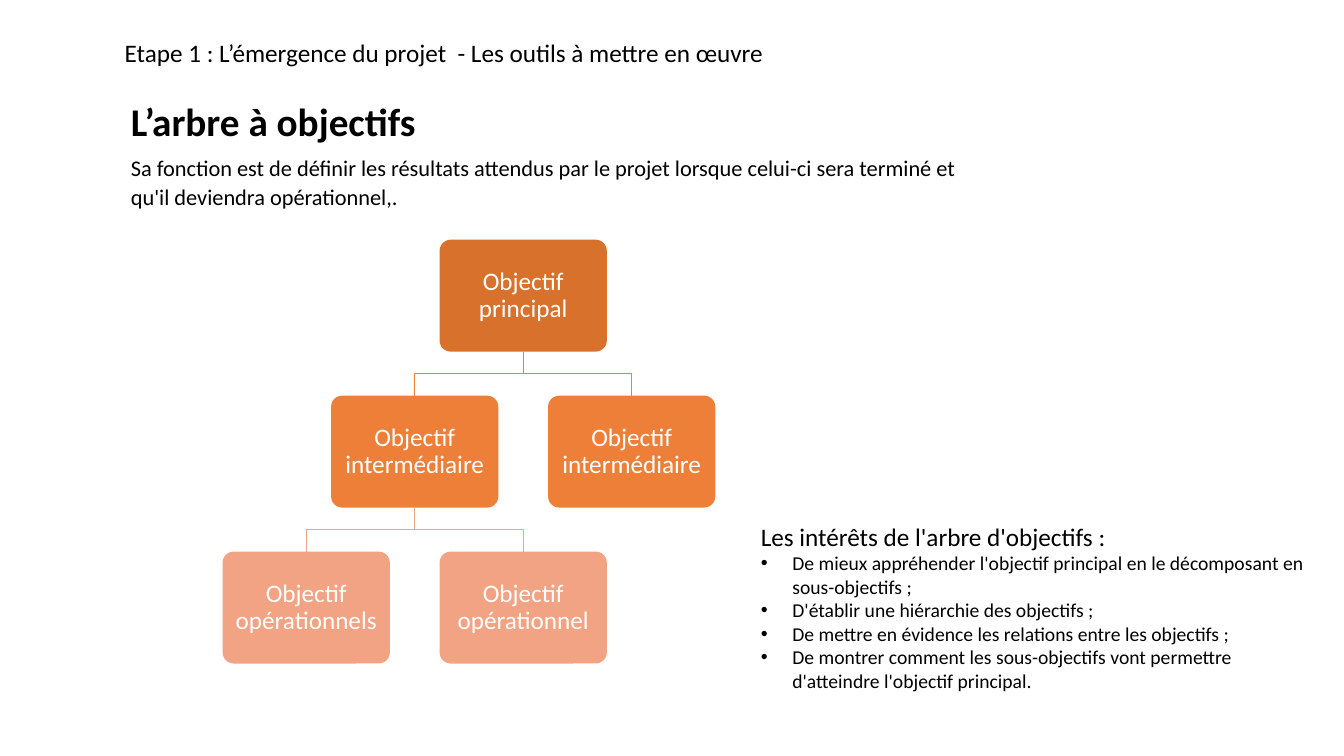
from lxml import etree
from pptx import Presentation
from pptx.dml.color import RGBColor
from pptx.enum import shapes, text
from pptx.oxml.ns import qn
from pptx.util import Pt

BLACK = RGBColor(0x00, 0x00, 0x00)
WHITE = RGBColor(0xFF, 0xFF, 0xFF)
LEVEL_COLORS = [RGBColor(0xD7, 0x71, 0x2C), RGBColor(0xED, 0x7F, 0x39), RGBColor(0xF1, 0xA3, 0x83)]

NODE_W, NODE_H = 119.5, 80
NODE_INSET = 5.2
BULLET_INDENT = 22.5

# label, level, column, parent index
NODES = [
    ("Objectif principal", 0, 2, None),
    ("Objectif intermédiaire", 1, 1, 0),
    ("Objectif intermédiaire", 1, 3, 0),
    ("Objectif opérationnels", 2, 0, 1),
    ("Objectif opérationnel", 2, 2, 1),
]
BENEFITS = [
    "De mieux appréhender l'objectif principal en le décomposant en sous-objectifs ;",
    "D'établir une hiérarchie des objectifs ;",
    "De mettre en évidence les relations entre les objectifs ;",
    "De montrer comment les sous-objectifs vont permettre d'atteindre l'objectif principal.",
]


def set_attrs(obj, values):
    for name, value in values.items():
        setattr(obj, name, value)


def write(p, content, size, color=BLACK, bold=False, **para):
    set_attrs(p, para)
    r = p.add_run()
    r.text = content
    set_attrs(r.font, {"name": "Calibri", "size": Pt(size), "bold": bold})
    r.font.color.rgb = color


def add_text_box(s, x, y, w, h):
    tf = s.shapes.add_textbox(Pt(x), Pt(y), Pt(w), Pt(h)).text_frame
    set_attrs(tf, {"word_wrap": True, "auto_size": text.MSO_AUTO_SIZE.SHAPE_TO_FIT_TEXT})
    return tf


def add_bullet(p):
    pPr = p._p.get_or_add_pPr()
    pPr.set("marL", str(Pt(BULLET_INDENT)))
    pPr.set("indent", str(-Pt(BULLET_INDENT)))
    etree.SubElement(pPr, qn("a:buFont")).set("typeface", "Arial")
    etree.SubElement(pPr, qn("a:buChar")).set("char", "•")


def add_header(s, x, y, w):
    tf = add_text_box(s, x, y, w, 29)
    write(tf.paragraphs[0], "Etape 1 : L’émergence du projet  - Les outils à mettre en œuvre", 18)


def add_intro(s, x, y, w):
    tf = add_text_box(s, x, y, 229, 41)
    write(tf.paragraphs[0], "L’arbre à objectifs", 28, bold=True)
    tf = add_text_box(s, x, y + 39, w, 49)
    write(tf.paragraphs[0],
          "Sa fonction est de définir les résultats attendus par le projet lorsque celui-ci "
          "sera terminé et qu'il deviendra opérationnel,.",
          16, line_spacing=1.07, space_after=Pt(8))


def add_branch(s, start, end, color):
    (x1, y1), (x2, y2) = start, end
    mid = (y1 + y2) / 2
    fb = s.shapes.build_freeform(Pt(x1), Pt(y1))
    fb.add_line_segments([(Pt(x), Pt(y)) for x, y in [(x1, mid), (x2, mid), (x2, y2)]], close=False)
    sp = fb.convert_to_shape()
    sp.shadow.inherit = False
    sp.fill.background()
    sp.line.color.rgb = color
    sp.line.width = Pt(1)


def add_node(s, x, y, label, color):
    sp = s.shapes.add_shape(shapes.MSO_SHAPE.ROUNDED_RECTANGLE, Pt(x), Pt(y), Pt(NODE_W), Pt(NODE_H))
    sp.adjustments[0] = 0.1
    sp.shadow.inherit = False
    sp.fill.solid()
    sp.fill.fore_color.rgb = color
    sp.line.fill.background()
    tf = sp.text_frame
    set_attrs(tf, {"word_wrap": True, "vertical_anchor": text.MSO_ANCHOR.MIDDLE})
    set_attrs(tf, {f"margin_{side}": Pt(NODE_INSET) for side in ("left", "right", "top", "bottom")})
    write(tf.paragraphs[0], label, 18, WHITE, alignment=text.PP_ALIGN.CENTER, line_spacing=0.9)


def add_tree(s, x, y, w, h):
    col_step = (w - NODE_W) / 3
    row_step = (h - NODE_H) / 2
    corners = [(x + col * col_step, y + level * row_step) for _, level, col, _ in NODES]
    for (_, level, _, parent), (left, top) in zip(NODES, corners):
        if parent is not None:
            px, py = corners[parent]
            add_branch(s, (px + NODE_W / 2, py + NODE_H), (left + NODE_W / 2, top), LEVEL_COLORS[level])
    for (label, level, _, _), (left, top) in zip(NODES, corners):
        add_node(s, left, top, label, LEVEL_COLORS[level])


def add_benefits(s, x, y, w, h):
    tf = add_text_box(s, x, y, w, h)
    write(tf.paragraphs[0], "Les intérêts de l'arbre d'objectifs :", 18)
    for benefit in BENEFITS:
        p = tf.add_paragraph()
        add_bullet(p)
        write(p, benefit, 14)


def main():
    prs = Presentation()
    set_attrs(prs, {"slide_width": Pt(960), "slide_height": Pt(540)})
    s = prs.slides.add_slide(prs.slide_layouts[6])
    add_header(s, 82, 23, 546.5)
    add_intro(s, 86.4, 66.2, 626.4)
    add_tree(s, 159, 171.2, 352, 302.8)
    add_benefits(s, 536.4, 368.6, 415.4, 152.6)
    prs.save("out.pptx")


if __name__ == "__main__":
    main()
